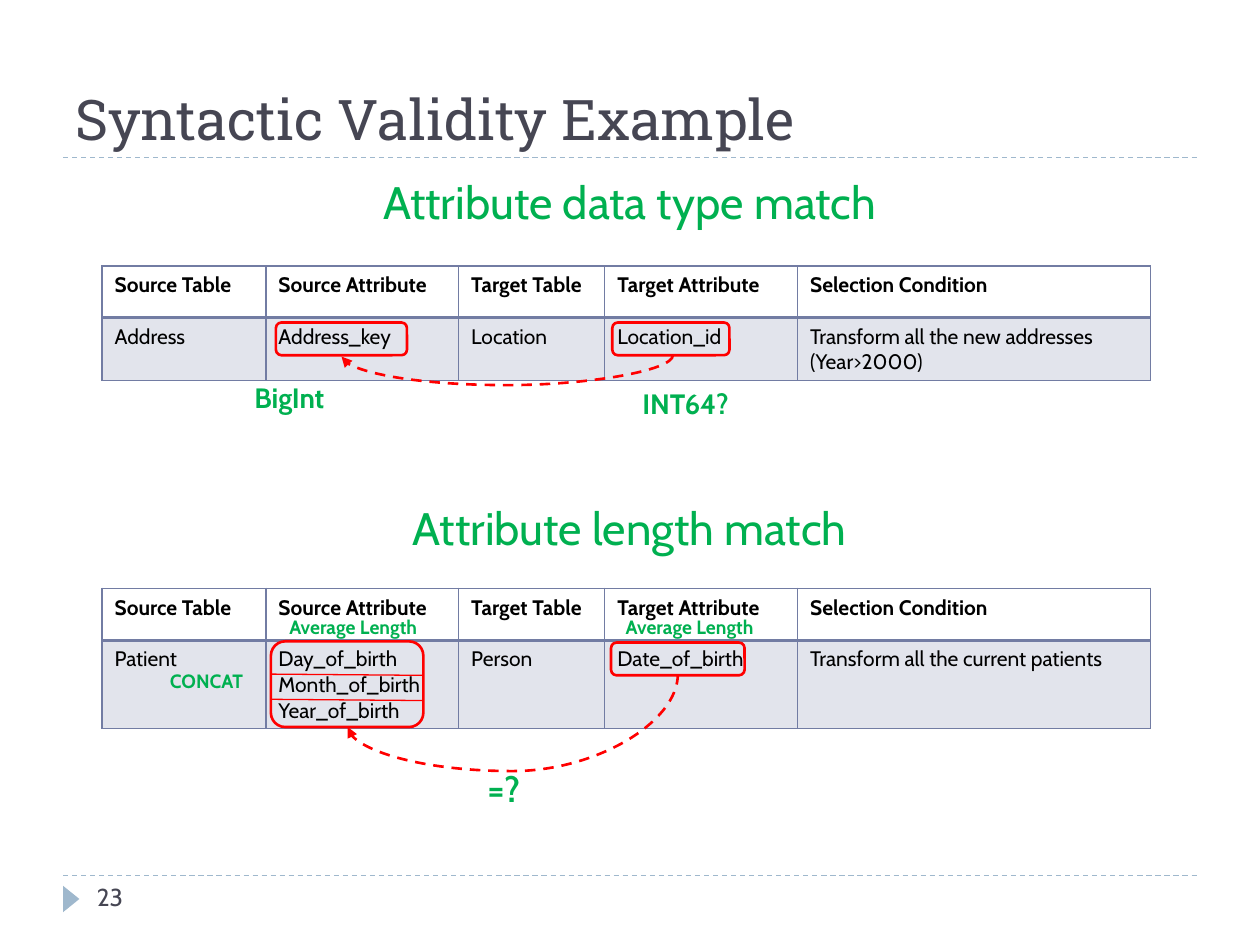
from lxml.etree import SubElement
from pptx import Presentation
from pptx.dml.color import RGBColor
from pptx.enum.dml import MSO_LINE
from pptx.enum.shapes import MSO_CONNECTOR, MSO_SHAPE
from pptx.enum.text import MSO_ANCHOR, PP_ALIGN
from pptx.oxml.ns import qn
from pptx.util import Inches, Pt

COLORS = {"title": "464653", "rule": "9FB8CD", "note": "00B050",
          "mark": "FF0000", "table": "727CA3", "text": "000000"}
WIDTH, HEIGHT = Inches(10), Inches(7.5)
GRID_COLUMNS, GRID_ROWS = 100, 75
HEADINGS = ["Source Table", "Source Attribute", "Target Table",
            "Target Attribute", "Selection Condition"]
TABLE_COLUMNS = [13, 15.3, 11.6, 15.3, 28]
TABLE_LEFT = 8.1
HEADER_ROWS = 4.1


def color(name):
    return RGBColor.from_string(COLORS[name])


def across(columns):
    return round(WIDTH * columns / GRID_COLUMNS)


def down(rows):
    return round(HEIGHT * rows / GRID_ROWS)


class SlideBuilder:
    """Holds the style and the current slide; lengths are grid columns and rows."""

    font = "Cabin"
    title_font = "Roboto Slab"

    def __init__(self, page):
        self.page = page

    def place(self, left, top, width, height):
        return across(left), down(top), across(width), down(height)

    def text(self, words, area, size, ink="note", bold=False, font=None,
             align=PP_ALIGN.LEFT, anchor=MSO_ANCHOR.TOP, wrap=True):
        frame = self.page.shapes.add_textbox(*self.place(*area)).text_frame
        frame.word_wrap = wrap
        frame.vertical_anchor = anchor
        para = frame.paragraphs[0]
        para.text = words
        para.alignment = align
        self.style(para, size, ink, bold, font)

    def style(self, para, size, ink, bold=False, font=None):
        para.font.name = font or self.font
        para.font.size = Pt(size)
        para.font.bold = bold
        para.font.color.rgb = color(ink)

    def line(self, start, end, ink, weight, dashed=False, kind=MSO_CONNECTOR.STRAIGHT):
        connector = self.page.shapes.add_connector(
            kind, across(start[0]), down(start[1]), across(end[0]), down(end[1]))
        connector.line.color.rgb = color(ink)
        connector.line.width = Pt(weight)
        if dashed:
            connector.line.dash_style = MSO_LINE.DASH
        SubElement(connector._element.spPr, qn("a:effectLst"))
        return connector

    def curved_arrow(self, start, end, bottom):
        """Dashed arrow running leftwards that sags to the row `bottom`."""
        (x1, y1), (x2, y2) = start, end
        middle_x, middle_y = (x1 + x2) / 2, (y1 + y2) / 2
        half_drop, half_span = (y2 - y1) / 2, (x1 - x2) / 2
        # The curve is laid out upright, then turned a quarter
        connector = self.line((middle_x - half_drop, middle_y - half_span),
                              (middle_x + half_drop, middle_y + half_span),
                              "mark", 1.5, True, MSO_CONNECTOR.CURVE)
        properties = connector._element.spPr
        properties.find(qn("a:xfrm")).set("rot", str(90 * 60000))
        guides = properties.find(qn("a:prstGeom")).find(qn("a:avLst"))
        sag = round((bottom - y1) / (y2 - y1) * 100000)
        SubElement(guides, qn("a:gd"), name="adj1", fmla=f"val {sag}")
        SubElement(properties.find(qn("a:ln")), qn("a:tailEnd"), type="triangle")

    def frame(self, *area):
        box = self.page.shapes.add_shape(MSO_SHAPE.ROUNDED_RECTANGLE, *self.place(*area))
        box.shadow.inherit = False
        box.fill.background()
        box.line.color.rgb = color("mark")
        box.line.width = Pt(1.5)

    def marker(self, *area):
        triangle = self.page.shapes.add_shape(MSO_SHAPE.ISOSCELES_TRIANGLE, *self.place(*area))
        triangle.rotation = 90
        triangle.shadow.inherit = False
        triangle.fill.solid()
        triangle.fill.fore_color.rgb = color("rule")
        triangle.line.fill.background()

    def borders(self, cell, bottom):
        properties = cell._tc.get_or_add_tcPr()
        for side, weight in {"L": 1, "R": 1, "T": 1, "B": bottom}.items():
            edge = SubElement(properties, qn(f"a:ln{side}"), w=str(Pt(weight)))
            fill = SubElement(edge, qn("a:solidFill"))
            SubElement(fill, qn("a:srgbClr"), val=COLORS["table"])

    def tint(self, cell, percent):
        cell.fill.solid()
        cell.fill.fore_color.rgb = color("table")
        tone = cell._tc.tcPr.find(qn("a:solidFill")).find(qn("a:srgbClr"))
        SubElement(tone, qn("a:alpha"), val=str(percent * 1000))

    def table(self, top, body_rows, values):
        heights = [HEADER_ROWS, body_rows]
        area = self.place(TABLE_LEFT, top, sum(TABLE_COLUMNS), sum(heights))
        table = self.page.shapes.add_table(2, len(HEADINGS), *area).table
        table.horz_banding = False
        for column, width in zip(table.columns, TABLE_COLUMNS):
            column.width = across(width)
        for row, height in zip(table.rows, heights):
            row.height = down(height)
        for r, entries in enumerate([HEADINGS, values]):
            for c, words in enumerate(entries):
                cell = table.cell(r, c)
                cell.text = words
                for para in cell.text_frame.paragraphs:
                    self.style(para, 12, "text", bold=r == 0)
                self.borders(cell, bottom=2 if r == 0 else 1)
                if r == 0:
                    cell.fill.background()
                else:
                    self.tint(cell, 20)


def main():
    deck = Presentation()
    deck.slide_width, deck.slide_height = WIDTH, HEIGHT
    slide = SlideBuilder(deck.slides.add_slide(deck.slide_layouts[6]))

    # Rules, title and page number
    for row in (69.5, 12.5):
        slide.line((5, row), (95, row), "rule", 0.75, dashed=True)
    slide.marker(4.6, 70.7, 2.1, 1.3)
    slide.text("Syntactic Validity Example", (5, 1.7, 90, 10.8), 32, "title",
               font=slide.title_font, anchor=MSO_ANCHOR.BOTTOM)
    slide.text("23", (6.7, 69.5, 21.7, 4), 14, "title")

    # Section headings
    for words, top in (("Attribute data type match", 13.3),
                       ("Attribute length match", 39.2)):
        slide.text(words, (5, top, 90, 5.4), 26, align=PP_ALIGN.CENTER)

    # Data type match
    slide.table(21.1, 5, ["Address", "Address_key", "Location", "Location_id",
                          "Transform all the new addresses (Year>2000)"])
    slide.frame(48.6, 25.6, 9.3, 2.6)
    slide.curved_arrow((53.4, 28.2), (27.1, 28.3), 30.6)
    slide.frame(21.9, 25.6, 10.4, 2.6)
    slide.text("BigInt", (19.2, 29.7, 8.4, 3.7), 16, bold=True, wrap=False)
    slide.text("INT64?", (50, 30.2, 9.6, 3.7), 16, bold=True, wrap=False)

    # Length match
    slide.table(46.7, 7, ["Patient", "Day_of_birth\nMonth_of_birth\nYear_of_birth",
                          "Person", "Date_of_birth", "Transform all the current patients"])
    slide.frame(21.5, 50.9, 12.1, 6.8)
    for row in (53.5, 55.5):
        slide.line((21.5, row), (33.6, row + 0.1), "mark", 0.75)
    slide.frame(48.5, 51, 10.6, 2.6)
    slide.curved_arrow((53.8, 53.5), (27.6, 57.7), 61.2)
    slide.text("CONCAT", (12.5, 52.6, 10.6, 2.9), 11, bold=True)
    slide.text("=?", (37.7, 60.4, 4.7, 4.4), 20, bold=True, wrap=False)
    for left in (20.5, 47.2):
        slide.text("Average Length", (left, 48.3, 13.6, 2.9), 11, bold=True,
                   align=PP_ALIGN.RIGHT, wrap=False)

    deck.save("out.pptx")


if __name__ == "__main__":
    main()
